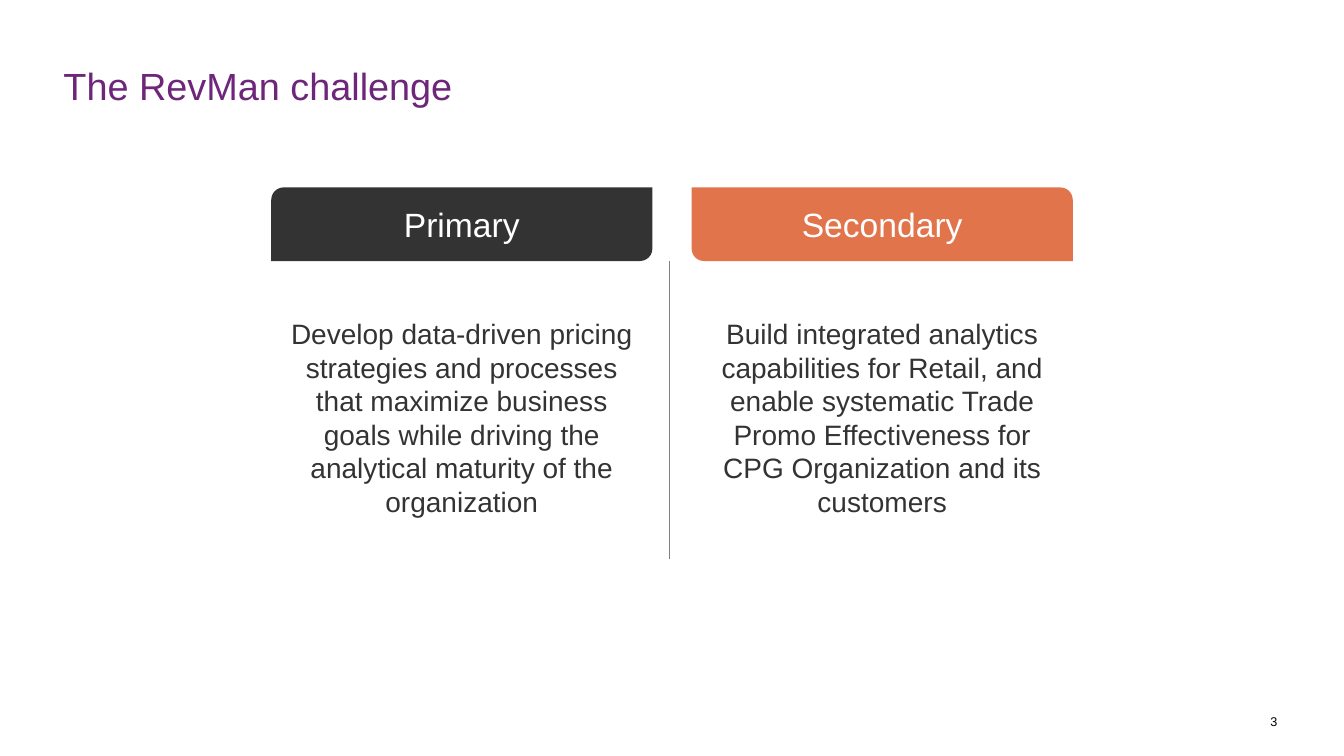
from dataclasses import dataclass

from lxml import etree
from pptx import Presentation, util as u
from pptx.dml.color import RGBColor
from pptx.enum import shapes, text
from pptx.oxml.ns import qn

TITLE = "The RevMan challenge"
PAGE_NUMBER = "3"
# heading, theme colour of its tab, (top-left, top-right) corner rounding, body
CHALLENGES = [
    ("Primary", "dark", (0.167, 0),
     "Develop data-driven pricing strategies and processes that maximize "
     "business goals while driving the analytical maturity of the organization"),
    ("Secondary", "orange", (0, 0.167),
     "Build integrated analytics capabilities for Retail, and enable systematic "
     "Trade Promo Effectiveness for CPG Organization and its customers"),
]


@dataclass(frozen=True)
class Theme:
    font: str = "Arial"
    purple: str = "6E267B"
    dark: str = "333333"
    orange: str = "E2744C"
    grey: str = "808080"
    white: str = "FFFFFF"
    black: str = "000000"
    title_size: float = 27
    heading_size: float = 24
    body_size: float = 20
    page_size: float = 9


THEME = Theme()
WIDTH, HEIGHT = 13.33, 7.5
MARGIN = 0.63
COLUMN_LEFT, COLUMN_WIDTH, COLUMN_GAP = 2.69, 3.78, 0.39
TAB_TOP, TAB_HEIGHT = 1.86, 0.73
BODY_TOP, BODY_HEIGHT = 3.09, 2.12
DIVIDER_LEFT, DIVIDER_HEIGHT = 6.64, 2.96


def inches(*lengths):
    return [u.Inches(length) for length in lengths]


def write(shape, words, size, color, align=text.PP_ALIGN.LEFT,
          anchor=text.MSO_ANCHOR.MIDDLE, side_inset=0.1):
    frame = shape.text_frame
    frame.word_wrap = True
    frame.vertical_anchor = anchor
    frame.margin_left = frame.margin_right = u.Inches(side_inset)
    paragraph = frame.paragraphs[0]
    paragraph.text = words
    paragraph.alignment = align
    paragraph.font.name = THEME.font
    paragraph.font.size = u.Pt(size)
    paragraph.font.color.rgb = RGBColor.from_string(color)


def add_column(slide, left, heading, fill, rounding, body):
    tab = slide.shapes.add_shape(
        shapes.MSO_SHAPE.ROUND_2_DIAG_RECTANGLE,
        *inches(left, TAB_TOP, COLUMN_WIDTH, TAB_HEIGHT))
    tab.adjustments[0], tab.adjustments[1] = rounding
    tab.shadow.inherit = False
    tab.fill.solid()
    tab.fill.fore_color.rgb = RGBColor.from_string(getattr(THEME, fill))
    tab.line.fill.background()
    write(tab, heading, THEME.heading_size, THEME.white, text.PP_ALIGN.CENTER)

    box = slide.shapes.add_textbox(
        *inches(left, BODY_TOP, COLUMN_WIDTH, BODY_HEIGHT))
    write(box, body, THEME.body_size, THEME.dark, text.PP_ALIGN.CENTER,
          text.MSO_ANCHOR.TOP)
    box.text_frame.auto_size = text.MSO_AUTO_SIZE.SHAPE_TO_FIT_TEXT


def add_divider(slide):
    top = TAB_TOP + TAB_HEIGHT
    divider = slide.shapes.add_connector(
        shapes.MSO_CONNECTOR.STRAIGHT,
        *inches(DIVIDER_LEFT, top, DIVIDER_LEFT, top + DIVIDER_HEIGHT))
    divider.line.color.rgb = RGBColor.from_string(THEME.grey)
    divider.line.width = u.Pt(0.25)
    etree.SubElement(divider._element.spPr, qn("a:effectLst"))


def main():
    presentation = Presentation()
    presentation.slide_width, presentation.slide_height = inches(WIDTH, HEIGHT)
    slide = presentation.slides.add_slide(presentation.slide_layouts[6])

    title = slide.shapes.add_textbox(*inches(MARGIN, 0.5, 12, 0.7))
    write(title, TITLE, THEME.title_size, THEME.purple, side_inset=0)

    for index, challenge in enumerate(CHALLENGES):
        left = COLUMN_LEFT + index * (COLUMN_WIDTH + COLUMN_GAP)
        add_column(slide, left, *challenge)
    add_divider(slide)

    page = slide.shapes.add_textbox(*inches(9.56, 6.96, 3.11, 0.4))
    write(page, PAGE_NUMBER, THEME.page_size, THEME.black,
          text.PP_ALIGN.RIGHT, side_inset=0)

    presentation.save("out.pptx")


if __name__ == "__main__":
    main()
